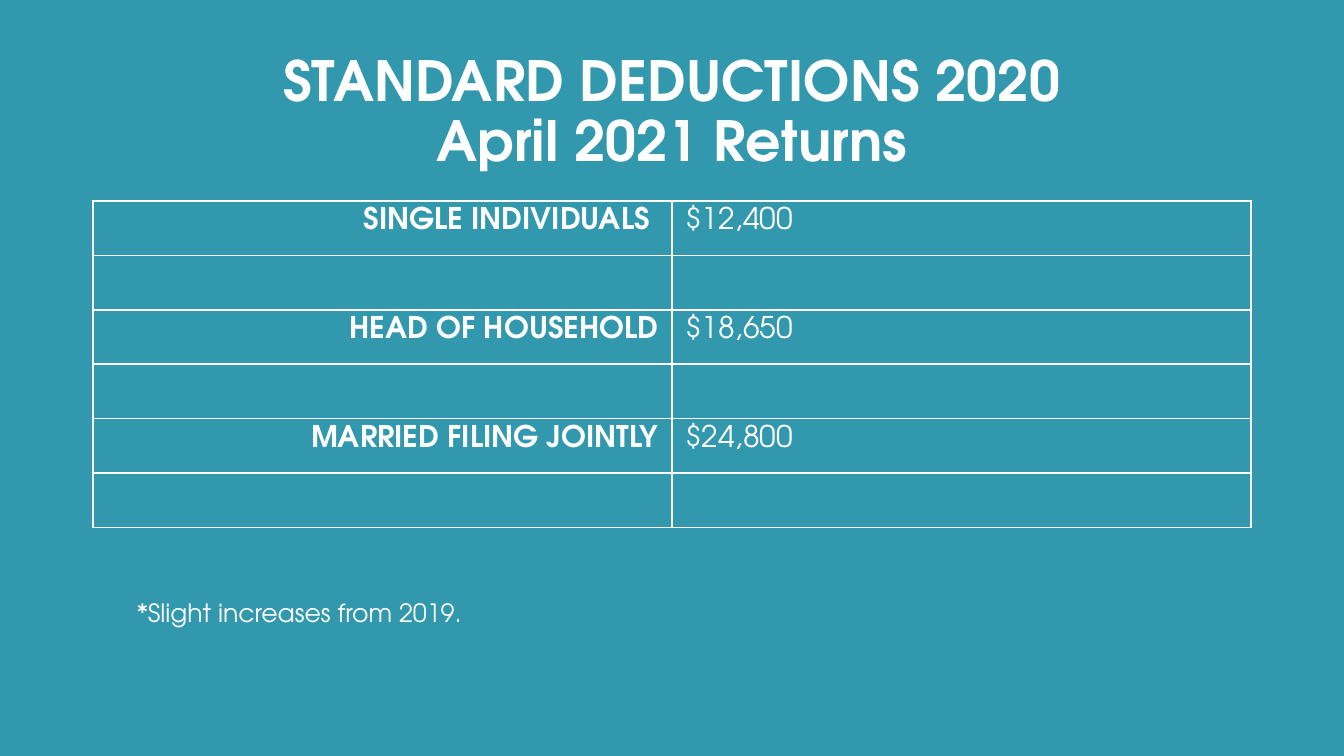
from collections import namedtuple

from lxml.etree import SubElement
from pptx import Presentation
from pptx.dml.color import RGBColor
from pptx.enum.text import MSO_ANCHOR as Anchor, MSO_AUTO_SIZE as AutoSize, PP_ALIGN as Align
from pptx.oxml.ns import qn
from pptx.util import Emu, Pt

PX_PER_INCH = 134.4
FONT = "TeX Gyre Adventor"
TEAL = RGBColor(0x31, 0x98, 0xAD)
WHITE = RGBColor(0xFF, 0xFF, 0xFF)

DEDUCTIONS = [
    ("SINGLE INDIVIDUALS ", "$12,400"),
    ("HEAD OF HOUSEHOLD", "$18,650"),
    ("MARRIED FILING JOINTLY", "$24,800"),
]

Box = namedtuple("Box", "left top width height")


def px(length):
    return Emu(round(length * 914400 / PX_PER_INCH))


def to_emu(box):
    return [px(length) for length in box]


def add_span(para, text, size, bold=False):
    span = para.add_run()
    span.text = text
    font = span.font
    font.name, font.size, font.bold = FONT, Pt(size), bold
    font.color.rgb = WHITE


def add_borders(cell, color, width):
    """Draw all four edges; they must precede the fill in the cell properties."""
    properties = cell._tc.get_or_add_tcPr()
    for edge in ("a:lnL", "a:lnR", "a:lnT", "a:lnB"):
        line = SubElement(properties, qn(edge), w=str(Pt(width)))
        fill = SubElement(line, qn("a:solidFill"))
        SubElement(fill, qn("a:srgbClr"), val=str(color))


def place_title(page, box, lines):
    title = page.shapes.title
    title.left, title.top, title.width, title.height = to_emu(box)
    frame = title.text_frame
    frame.word_wrap = True
    frame.auto_size = AutoSize.NONE
    frame.vertical_anchor = Anchor.MIDDLE
    para = frame.paragraphs[0]
    para.alignment = Align.CENTER
    para.line_spacing = 0.9
    for index, line in enumerate(lines):
        if index:
            para.add_line_break()
        add_span(para, line, 29.7, bold=True)


def place_deductions(page, box):
    """Each filing status takes one row and is followed by an empty one."""
    row_count = 2 * len(DEDUCTIONS)
    table = page.shapes.add_table(row_count, 2, *to_emu(box)).table
    table.first_row = table.horz_banding = False
    for row in table.rows:
        row.height = px(box.height / row_count)
    for cell in table.iter_cells():
        add_borders(cell, WHITE, 1)
        cell.fill.background()
    for index, (status, amount) in enumerate(DEDUCTIONS):
        label = table.cell(2 * index, 0).text_frame.paragraphs[0]
        label.alignment = Align.RIGHT
        add_span(label, status, 16, bold=True)
        add_span(table.cell(2 * index, 1).text_frame.paragraphs[0], amount, 16)


def place_footnote(page, box):
    frame = page.shapes.add_textbox(*to_emu(box)).text_frame
    frame.word_wrap = False
    frame.auto_size = AutoSize.SHAPE_TO_FIT_TEXT
    add_span(frame.paragraphs[0], "*Slight increases from 2019.", 13.5)


def main():
    deck = Presentation()
    deck.slide_width, deck.slide_height = px(1344), px(756)
    page = deck.slides.add_slide(deck.slide_layouts[5])
    page.background.fill.solid()
    page.background.fill.fore_color.rgb = TEAL

    place_title(page, Box(93, 40, 1158, 147),
                ["STANDARD DEDUCTIONS 2020", "April 2021 Returns"])
    place_deductions(page, Box(93, 201, 1158, 326))
    place_footnote(page, Box(124, 591, 359, 44))
    deck.save("out.pptx")


if __name__ == "__main__":
    main()
